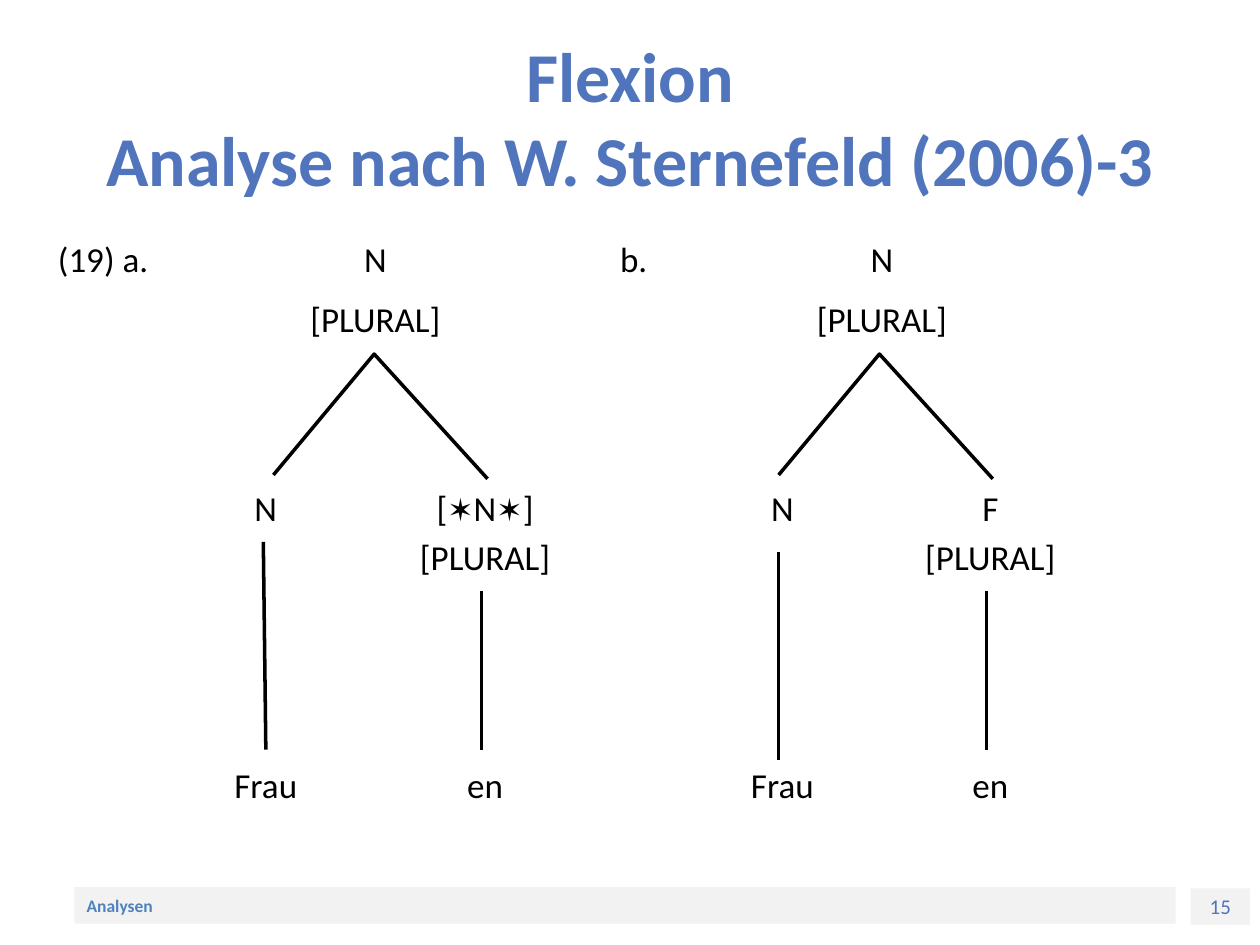
"""Build a slide with two syntax trees for German plural inflection."""
from lxml.etree import SubElement
from pptx import Presentation
from pptx.dml.color import RGBColor
from pptx.enum.shapes import MSO_CONNECTOR, MSO_SHAPE
from pptx.enum.text import MSO_ANCHOR, MSO_AUTO_SIZE, PP_ALIGN
from pptx.oxml.ns import qn
from pptx.util import Inches, Pt

HUES = {"title": "5075BC", "foot": "4F81BD", "bar": "F2F2F2", "ink": "000000"}
FONT = "Calibri"
TITLE = "Flexion\vAnalyse nach W. Sternefeld (2006)-3"
MARK = "[PLURAL]"
BARS = [
    ("15", (9.45, 7.05, 0.47, 0.29), 12, "title", False, PP_ALIGN.CENTER),
    ("Analysen", (0.59, 7.04, 8.74, 0.29), 10, "foot", True, PP_ALIGN.LEFT),
]
ROWS = {"top": 1.78, "mark": 2.25, "node": 3.75, "sub": 4.14, "leaf": 5.95}
TREES = [
    {"tag": "(19) a. ", "tag_x": 0.35, "root": 2.48, "left": 1.61, "right": 3.35,
     "head": ["[", "✶", "N", "✶", "]"], "fork": 2.17,
     "stems": [(2.09, 4.3, 2.11, 5.95), (3.82, 4.69, 3.82, 5.95)]},
    {"tag": "b.", "tag_x": 4.53, "root": 6.5, "left": 5.71, "right": 7.36,
     "head": ["F"], "fork": 6.18,
     "stems": [(6.18, 4.38, 6.18, 6.03), (7.83, 4.69, 7.83, 5.95)]},
]
FORK = [(0, 3.77), (0.8, 2.81), (1.7, 3.8)]


def tint(hue):
    return RGBColor.from_string(HUES[hue])


def style(para, size, hue, bold=False, align=PP_ALIGN.CENTER):
    para.alignment = align
    font = para.font
    font.name, font.size, font.bold = FONT, Pt(size), bold
    font.color.rgb = tint(hue)


def label(slide, parts, left, row):
    pad = 0.15 if MARK in parts else 0
    area = (left - pad, ROWS[row], 1 + 2 * pad, 0.55)
    frame = slide.shapes.add_textbox(*map(Inches, area)).text_frame
    frame.word_wrap = False
    frame.vertical_anchor = MSO_ANCHOR.MIDDLE
    para = frame.paragraphs[0]
    style(para, 20, "ink")
    for part in parts:
        run = para.add_run()
        run.text = part
        if part == "✶":
            run.font.size = Pt(18)


def ink(shape):
    shape.line.color.rgb = tint("ink")
    shape.line.width = Pt(2)


def stem(slide, ends):
    line = slide.shapes.add_connector(MSO_CONNECTOR.STRAIGHT, *map(Inches, ends))
    ink(line)
    SubElement(line._element.spPr, qn("a:effectLst"))


def fork(slide, left):
    first, *rest = [(Inches(left + x), Inches(y)) for x, y in FORK]
    build = slide.shapes.build_freeform(*first)
    build.add_line_segments(rest, close=False)
    shape = build.convert_to_shape()
    shape.shadow.inherit = False
    shape.fill.background()
    ink(shape)


def bar(slide, text, area, size, hue, bold, align):
    shape = slide.shapes.add_shape(MSO_SHAPE.RECTANGLE, *map(Inches, area))
    shape.shadow.inherit = False
    shape.fill.solid()
    shape.fill.fore_color.rgb = tint("bar")
    shape.line.fill.background()
    frame = shape.text_frame
    frame.text = text
    frame.vertical_anchor = MSO_ANCHOR.MIDDLE
    style(frame.paragraphs[0], size, hue, bold, align)


def tree(slide, data):
    root, left, right = data["root"], data["left"], data["right"]
    for parts, x, row in [
        ([data["tag"]], data["tag_x"], "top"),
        (["N"], root, "top"),
        ([MARK], root, "mark"),
        (["N"], left, "node"),
        (["Frau"], left, "leaf"),
        (data["head"], right, "node"),
        ([MARK], right, "sub"),
        (["en"], right, "leaf"),
    ]:
        label(slide, parts, x, row)
    for ends in data["stems"]:
        stem(slide, ends)
    fork(slide, data["fork"])


def main():
    deck = Presentation()
    deck.slide_width, deck.slide_height = Inches(10), Inches(7.5)
    slide = deck.slides.add_slide(deck.slide_layouts[5])
    title = slide.shapes.title
    title.left, title.top, title.width, title.height = map(Inches, (0.5, 0.3, 9, 1.25))
    frame = title.text_frame
    frame.text = TITLE
    frame.auto_size = MSO_AUTO_SIZE.NONE
    frame.vertical_anchor = MSO_ANCHOR.MIDDLE
    style(frame.paragraphs[0], 40, "title", True)
    for item in BARS:
        bar(slide, *item)
    for data in TREES:
        tree(slide, data)
    deck.save("out.pptx")


if __name__ == "__main__":
    main()
